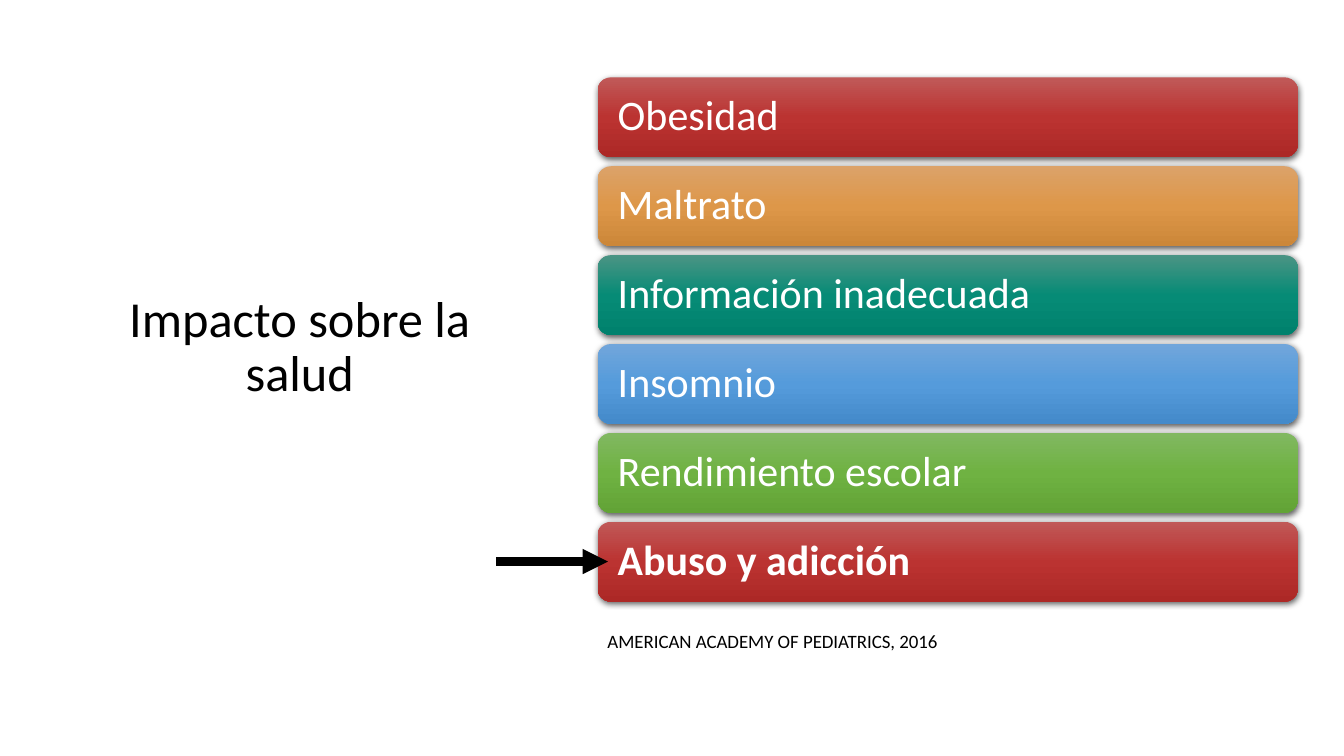
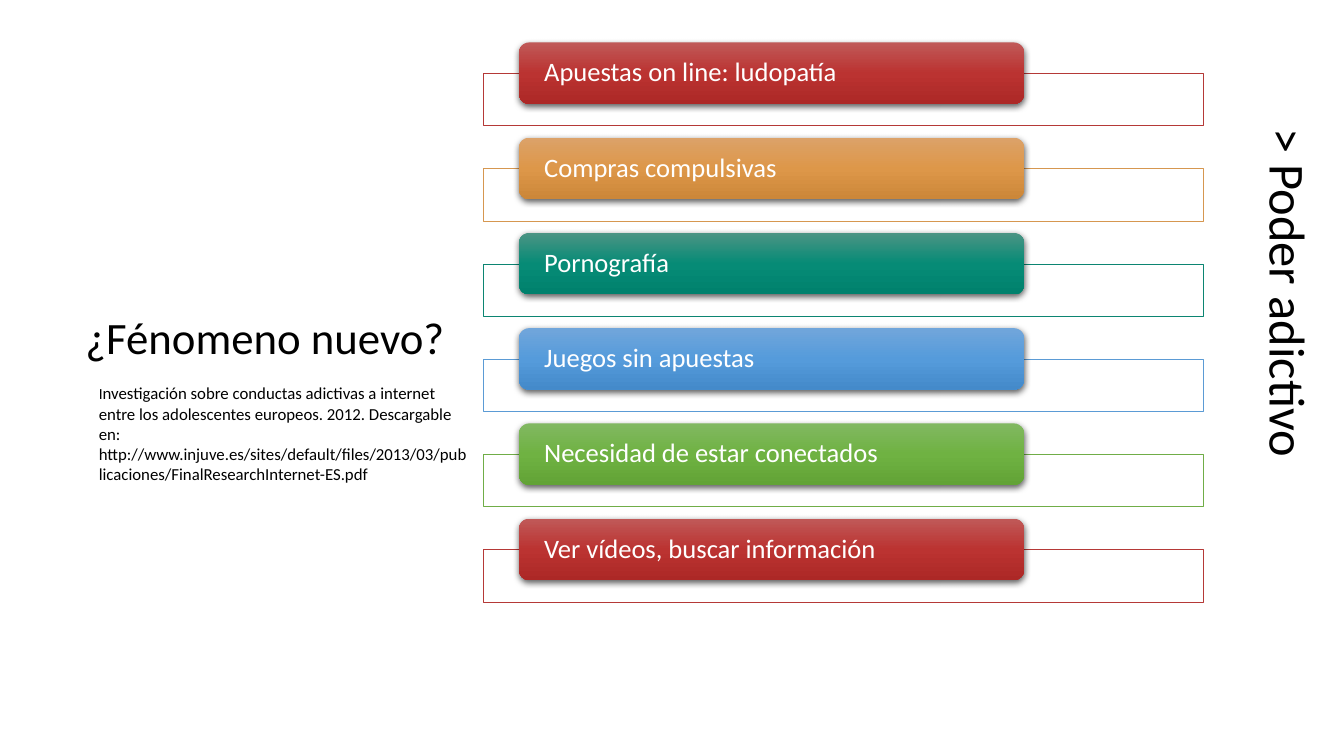
"""Build two slides on the health impact and addictive power of screens."""
from dataclasses import dataclass
from itertools import cycle

from lxml import etree
from pptx import Presentation
from pptx import util as u
from pptx.dml.color import RGBColor
from pptx.enum import shapes, text
from pptx.oxml.ns import qn
from pptx.shapes.autoshape import Shape
from pptx.slide import Slide
from pptx.text.text import TextFrame

FONT = "Calibri"
HUES = ("red", "orange", "teal", "blue", "green")
COLOURS = {
    "black": "000000", "white": "FFFFFF",
    "red_top": "C05958", "red_middle": "BB3331", "red_bottom": "AC2826", "red_line": "B53937",
    "orange_top": "DCA269", "orange_middle": "DD9749", "orange_bottom": "CC8739", "orange_line": "D69750",
    "teal_top": "4B9484", "teal_middle": "068B76", "teal_bottom": "00816D", "teal_line": "0C8572",
    "blue_top": "71A6DB", "blue_middle": "559BDB", "blue_bottom": "448ACA", "blue_line": "5B9BD5",
    "green_top": "81B861", "green_middle": "6FB242", "green_bottom": "62A336", "green_line": "70AD47",
}


@dataclass(frozen=True)
class Box:
    left: float
    top: float
    width: float
    height: float

    def lengths(self) -> tuple[u.Length, ...]:
        return tuple(u.Cm(value) for value in (self.left, self.top, self.width, self.height))

    def down(self, distance: float) -> "Box":
        return Box(self.left, self.top + distance, self.width, self.height)


@dataclass(frozen=True)
class Run:
    words: str
    size: float
    colour: str = "black"
    bold: bool = False


@dataclass(frozen=True)
class BarList:
    first: Box
    pitch: float
    inset: float
    size: float
    labels: tuple[str, ...]
    bold_label: str = ""
    first_frame: Box | None = None


IMPACTS = BarList(
    Box(15.06, 1.95, 17.65, 2.01), 2.24, 0.41, 30,
    ("Obesidad", "Maltrato", "Información inadecuada", "Insomnio",
     "Rendimiento escolar", "Abuso y adicción"),
    bold_label="Abuso y adicción",
)
ADDICTIONS = BarList(
    Box(13.08, 1.07, 12.73, 1.55), 2.4, 0.56, 19,
    ("Apuestas on line: ludopatía", "Compras compulsivas", "Pornografía",
     "Juegos sin apuestas", "Necesidad de estar conectados", "Ver vídeos, buscar información"),
    first_frame=Box(12.17, 1.85, 18.16, 1.32),
)


def colour(name: str) -> RGBColor:
    return RGBColor.from_string(COLOURS[name])


def write(frame: TextFrame, runs: tuple[Run, ...], centred: bool = False, spacing: float = 1.0) -> None:
    paragraph = frame.paragraphs[0]
    paragraph.alignment = text.PP_ALIGN.CENTER if centred else text.PP_ALIGN.LEFT
    paragraph.line_spacing = spacing
    for item in runs:
        run = paragraph.add_run()
        run.text = item.words
        run.font.name = FONT
        run.font.size = u.Pt(item.size)
        run.font.bold = item.bold
        run.font.color.rgb = colour(item.colour)


def add_text(slide: Slide, box: Box, *runs: Run, wrap: bool = True) -> Shape:
    shape = slide.shapes.add_textbox(*box.lengths())
    shape.text_frame.word_wrap = wrap
    write(shape.text_frame, runs)
    return shape


def add_title(slide: Slide, box: Box, words: str, size: float) -> None:
    shape = slide.shapes.add_textbox(*box.lengths())
    shape.text_frame.word_wrap = True
    shape.text_frame.vertical_anchor = text.MSO_ANCHOR.MIDDLE
    write(shape.text_frame, (Run(words, size),), centred=True, spacing=0.9)


def add_alpha(parent: etree._Element, percent: int) -> None:
    etree.SubElement(parent, qn("a:alpha"), val=str(percent * 1000))


def shade(shape: Shape, hue: str) -> None:
    shape.fill.gradient()
    shape.fill.gradient_angle = 270
    stop_list = shape._element.spPr.find(qn("a:gradFill")).find(qn("a:gsLst"))
    etree.SubElement(stop_list, qn("a:gs"), pos="100000")
    for stop, part, position in zip(shape.fill.gradient_stops, ("top", "middle", "bottom"), (0, 0.5, 1)):
        stop.color.rgb = colour(f"{hue}_{part}")
        stop.position = position


def cast_shadow(shape: Shape) -> None:
    shape.shadow.inherit = False
    effects = shape._element.spPr.find(qn("a:effectLst"))
    shadow = etree.SubElement(effects, qn("a:outerShdw"), blurRad=str(u.Pt(4.5)), dist=str(u.Pt(1.5)),
                              dir="5400000", algn="ctr", rotWithShape="0")
    add_alpha(etree.SubElement(shadow, qn("a:srgbClr"), val=COLOURS["black"]), 63)


def add_frame(slide: Slide, box: Box, hue: str) -> None:
    frame = slide.shapes.add_shape(shapes.MSO_SHAPE.RECTANGLE, *box.lengths())
    frame.shadow.inherit = False
    frame.fill.solid()
    frame.fill.fore_color.rgb = colour("white")
    add_alpha(frame._element.spPr.find(qn("a:solidFill"))[0], 90)
    frame.line.color.rgb = colour(f"{hue}_line")
    frame.line.width = u.Pt(0.5)


def add_bar(slide: Slide, box: Box, hue: str, label: Run, inset: float) -> None:
    bar = slide.shapes.add_shape(shapes.MSO_SHAPE.ROUNDED_RECTANGLE, *box.lengths())
    shade(bar, hue)
    bar.line.fill.background()
    cast_shadow(bar)
    frame = bar.text_frame
    frame.word_wrap = True
    frame.vertical_anchor = text.MSO_ANCHOR.MIDDLE
    frame.margin_left = frame.margin_right = u.Cm(inset)
    frame.margin_top = frame.margin_bottom = 0
    write(frame, (label,), spacing=0.9)


def add_bar_list(slide: Slide, bars: BarList) -> None:
    for index, (label, hue) in enumerate(zip(bars.labels, cycle(HUES))):
        distance = index * bars.pitch
        if bars.first_frame:
            add_frame(slide, bars.first_frame.down(distance), hue)
        run = Run(label, bars.size, "white", label == bars.bold_label)
        add_bar(slide, bars.first.down(distance), hue, run, bars.inset)


def add_arrow(slide: Slide, left: float, right: float, height: float) -> None:
    arrow = slide.shapes.add_connector(shapes.MSO_CONNECTOR.STRAIGHT, u.Cm(left), u.Cm(height),
                                       u.Cm(right), u.Cm(height))
    arrow.line.color.rgb = colour("black")
    arrow.line.width = u.Pt(6)
    etree.SubElement(arrow.line._get_or_add_ln(), qn("a:tailEnd"), type="triangle")
    etree.SubElement(arrow._element.spPr, qn("a:effectLst"))


def build_impact_slide(slide: Slide) -> None:
    add_title(slide, Box(1.55, 2.21, 12.01, 13.13), "Impacto sobre la salud", 36)
    add_bar_list(slide, IMPACTS)
    add_text(slide, Box(15.06, 15.75, 9.3, 0.84),
             Run("AMERICAN ACADEMY OF PEDIATRICS, 2016", 13.5), wrap=False)
    add_arrow(slide, 12.5, 15.32, 14.15)


def build_addiction_slide(slide: Slide) -> None:
    add_title(slide, Box(0, 1.78, 13.36, 13.59), "¿Fénomeno nuevo?", 32)
    add_bar_list(slide, ADDICTIONS)
    power = add_text(slide, Box(26.9, 7.67, 11.18, 1.8), Run("> Poder adictivo", 36))
    power.rotation = 90
    add_text(slide, Box(2.24, 9.53, 9.83, 2.82), Run("I", 11),
             Run("nvestigación sobre conductas adictivas a internet entre los adolescentes europeos. 2012. "
                 "Descargable en: http://www.injuve.es/sites/default/files/2013/03/publicaciones/"
                 "FinalResearchInternet-ES.pdf", 12))


def main() -> None:
    presentation = Presentation()
    presentation.slide_width = u.Cm(33.87)
    presentation.slide_height = u.Cm(19.05)
    blank = presentation.slide_layouts[6]
    for build in (build_impact_slide, build_addiction_slide):
        build(presentation.slides.add_slide(blank))
    presentation.save("out.pptx")


if __name__ == "__main__":
    main()
